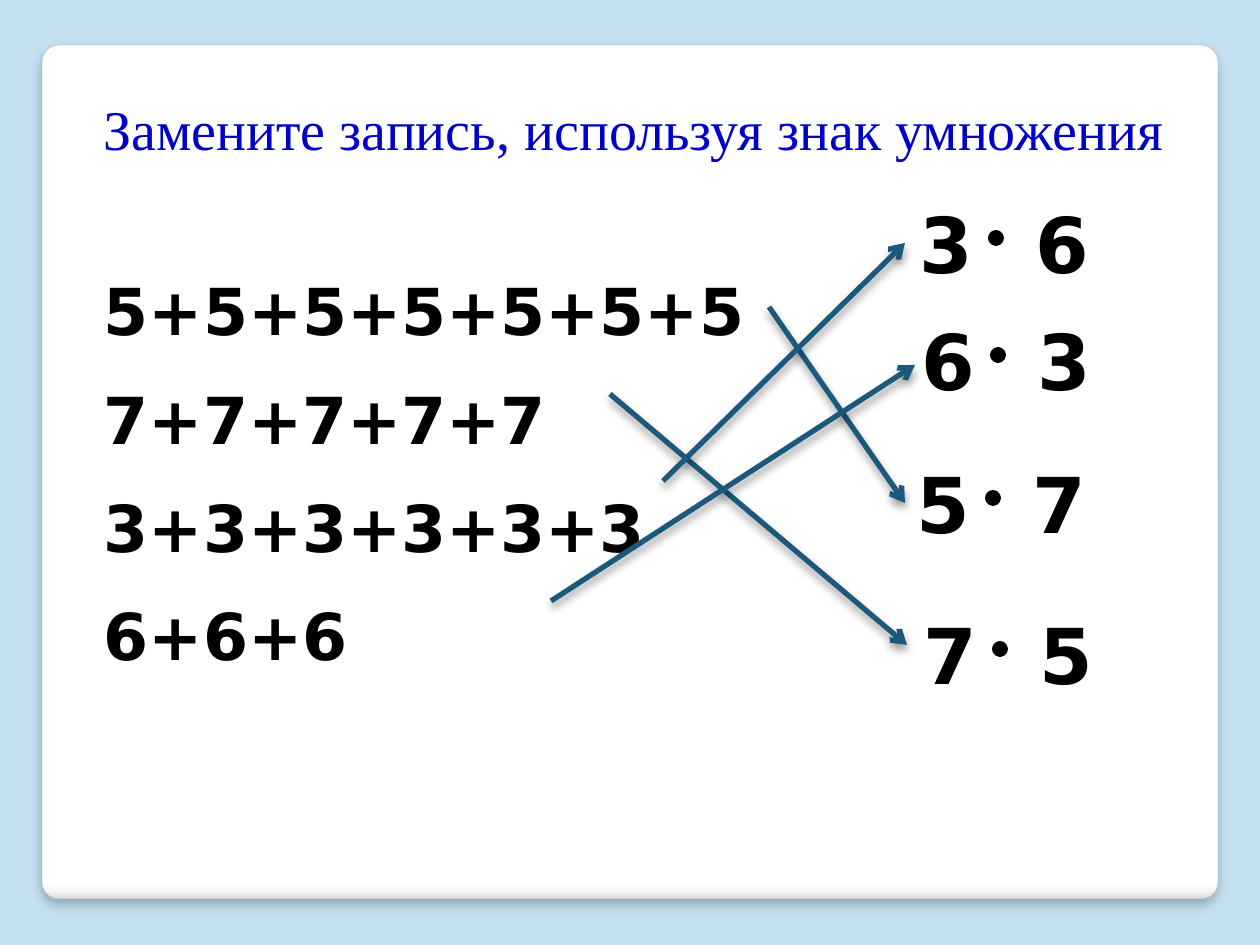
from lxml import etree
from pptx import Presentation
from pptx.dml.color import RGBColor
from pptx.enum.shapes import MSO_CONNECTOR, MSO_SHAPE
from pptx.enum.text import MSO_ANCHOR, MSO_AUTO_SIZE, PP_ALIGN
from pptx.oxml import parse_xml
from pptx.oxml.ns import nsdecls, qn
from pptx.util import Emu, Pt

STRAIGHT = MSO_CONNECTOR.STRAIGHT
ROUNDED, OVAL = MSO_SHAPE.ROUNDED_RECTANGLE, MSO_SHAPE.OVAL
TOP, CENTER, NO_FIT = MSO_ANCHOR.TOP, PP_ALIGN.CENTER, MSO_AUTO_SIZE.NONE
COLORS = {"sky": "C4E1F2", "edge": "A4A4A4", "title": "0000CC",
          "ink": "000000", "arrow": "1B587C"}
RGB = {name: RGBColor.from_string(value) for name, value in COLORS.items()}


def px(*lengths):
    return [Emu(round(length * 914400 / 126)) for length in lengths]


def add_shadow(shape, opacity, blur, distance):
    shape._element.spPr.append(parse_xml(
        f'<a:effectLst {nsdecls("a")}><a:outerShdw blurRad="{Pt(blur)}" '
        f'dist="{Pt(distance)}" dir="5400000" algn="t" rotWithShape="0">'
        f'<a:srgbClr val="{COLORS["ink"]}"><a:alpha val="{opacity * 1000}"/>'
        '</a:srgbClr></a:outerShdw></a:effectLst>'))


prs = Presentation()
prs.slide_width, prs.slide_height = px(1260, 945)
slide = prs.slides.add_slide(prs.slide_layouts[5])
slide.background.fill.solid()
slide.background.fill.fore_color.rgb = RGB["sky"]

title = slide.shapes.title
title.left, title.top, title.width, title.height = px(79, 88, 1124, 81)
title.text_frame.text = "Замените запись, используя знак умножения "
title.text_frame.auto_size = NO_FIT
title.text_frame.vertical_anchor = TOP
heading = title.text_frame.paragraphs[0]
heading.alignment = CENTER
heading.font.name, heading.font.size = "Times New Roman", Pt(32)
heading.font.color.rgb = RGB["title"]

panel = slide.shapes.add_shape(ROUNDED, *px(42, 45, 1176, 854))
panel.adjustments[0] = 0.02
stops = [(0, "FFFFFF"), (98, "FFFFFF"), (99, "F7F7F7"), (100, "DADADA")]
panel.fill.gradient()
gradient = panel._element.spPr.find(qn("a:gradFill"))
stop_list = gradient.find(qn("a:gsLst"))
for old_stop in list(stop_list):
    stop_list.remove(old_stop)
for position, color in stops:
    stop = etree.SubElement(stop_list, qn("a:gs"), pos=str(position * 1000))
    etree.SubElement(stop, qn("a:srgbClr"), val=color)
gradient.find(qn("a:lin")).set("ang", "5400000")
panel.line.color.rgb = RGB["edge"]
panel.line.width = Pt(0.16)
add_shadow(panel, 25, 6, 4)
title._element.addprevious(panel._element)

sums = slide.shapes.add_textbox(*px(79, 258, 758, 382)).text_frame
sums.word_wrap = True
sums.margin_left, sums.margin_top, sums.margin_right, sums.margin_bottom = px(25, 13, 13, 6)
sums.text = "\n".join("+".join(digit * count)
                      for digit, count in [("5", 7), ("7", 5), ("3", 6), ("6", 3)])
for paragraph in sums.paragraphs:
    paragraph.space_before, paragraph.space_after = Pt(2.5), Pt(15)
    paragraph.font.name, paragraph.font.size = "DejaVu Sans", Pt(37)
    paragraph.font.bold = True
    paragraph.font.color.rgb = RGB["ink"]

products = [("3", "6", 907, 190), ("5", "7", 904, 450),
            ("6", "3", 909, 307), ("7", "5", 911, 601)]
for first, second, left, top in products:
    product = slide.shapes.add_group_shape()
    for digit, offset, width in [(first, 0, 59), (second, 116, 64)]:
        factor = product.shapes.add_textbox(*px(left + offset, top, width, 106)).text_frame
        factor.word_wrap = True
        factor.text = digit
        font = factor.paragraphs[0].font
        font.name, font.size, font.bold = "DejaVu Sans", Pt(44), True
        font.color.rgb = RGB["ink"]
    dot = product.shapes.add_shape(OVAL, *px(left + 84, top + 43, 10, 10))
    dot.shadow.inherit = False
    dot.fill.solid()
    dot.fill.fore_color.rgb = RGB["ink"]
    dot.line.color.rgb = RGB["ink"]
    dot.line.width = Pt(3.35)

matches = [(769, 307, 905, 503), (610, 394, 907, 645),
           (663, 481, 905, 243), (551, 601, 915, 365)]
for ends in matches:
    arrow = slide.shapes.add_connector(STRAIGHT, *px(*ends))
    arrow.line.color.rgb = RGB["arrow"]
    arrow.line.width = Pt(3)
    etree.SubElement(arrow.line._get_or_add_ln(), qn("a:tailEnd"), type="arrow")
    add_shadow(arrow, 40, 5.2, 3)

prs.save("out.pptx")
